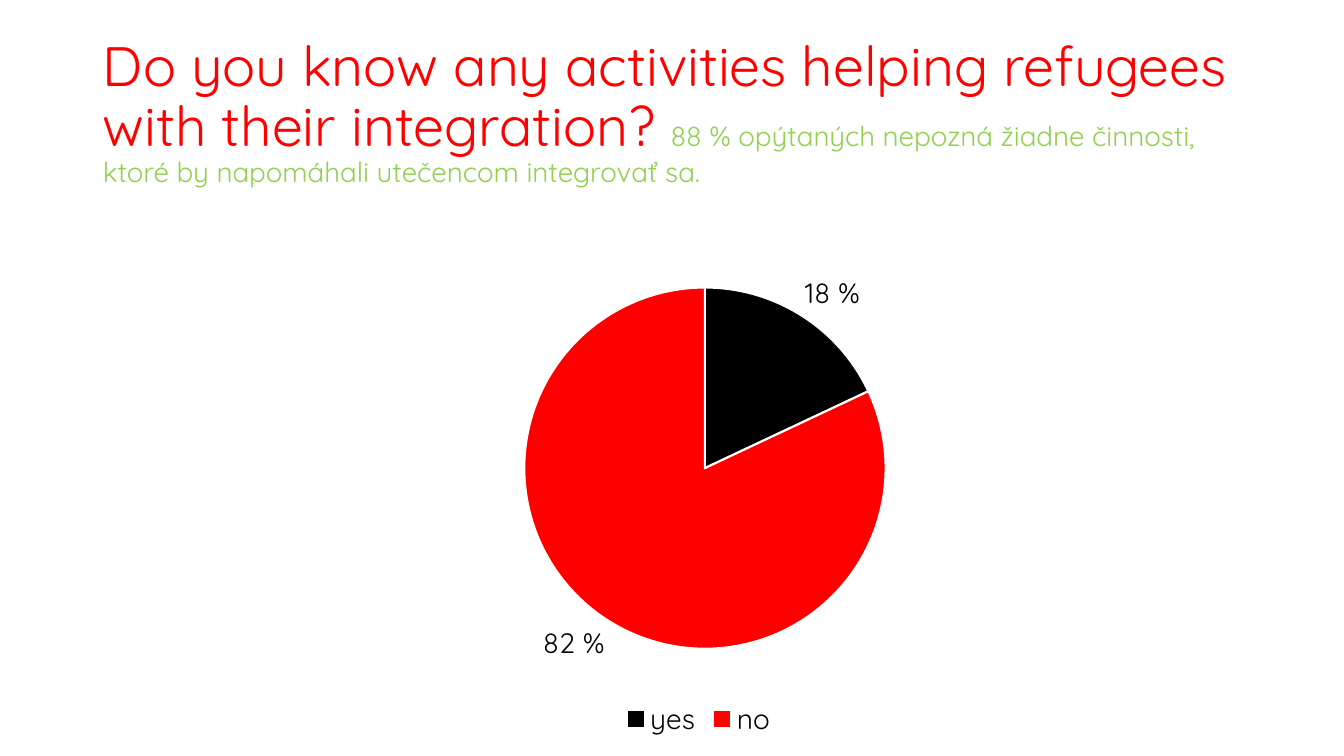
from lxml.etree import SubElement
from pptx import Presentation
from pptx.chart.data import CategoryChartData
from pptx.dml.color import RGBColor
from pptx.enum.chart import XL_CHART_TYPE, XL_LABEL_POSITION, XL_LEGEND_POSITION
from pptx.enum.text import MSO_ANCHOR, MSO_AUTO_SIZE, PP_ALIGN
from pptx.oxml.ns import qn
from pptx.util import Inches, Pt

FONT = "Quicksand"
BLACK, RED, GREEN, WHITE = "000000", "FF0000", "92D050", "FFFFFF"


def rgb(color):
    return RGBColor.from_string(color)


def set_font(font, size, color, name=FONT):
    font.name = name
    font.size = Pt(size)
    font.color.rgb = rgb(color)


prs = Presentation()
prs.slide_width, prs.slide_height = Inches(13.33), Inches(7.5)
slide = prs.slides.add_slide(prs.slide_layouts[5])

# Title: question and answer
title = slide.shapes.title
title.left, title.top = Inches(0.92), Inches(0.4)
title.width, title.height = Inches(11.5), Inches(1.45)
tf = title.text_frame
tf.word_wrap = True
tf.auto_size = MSO_AUTO_SIZE.NONE
tf.vertical_anchor = MSO_ANCHOR.MIDDLE
p = tf.paragraphs[0]
p.alignment = PP_ALIGN.LEFT
p.line_spacing = 0.9
for text, size, color in [
    ("Do you know any activities helping refugees with their integration? ", 39.6, RED),
    ("88 % opýtaných nepozná žiadne činnosti, ktoré by napomáhali utečencom integrovať sa.",
     19.8, GREEN),
]:
    r = p.add_run()
    r.text = text
    set_font(r.font, size, color)

# Pie chart
data = CategoryChartData()
data.categories = ["yes", "no"]
data.add_series("Series 1", (18, 82))
chart = slide.shapes.add_chart(
    XL_CHART_TYPE.PIE, Inches(0.7), Inches(2.46), Inches(12.46), Inches(4.91), data
).chart
chart.has_title = False
set_font(chart.font, 10, BLACK, "Calibri")

chart.has_legend = True
chart.legend.position = XL_LEGEND_POSITION.BOTTOM
chart.legend.include_in_layout = False
set_font(chart.legend.font, 20, BLACK)

plot = chart.plots[0]
plot.vary_by_categories = True
for i, color in enumerate([BLACK, RED]):
    fmt = plot.series[0].points[i].format
    fmt.fill.solid()
    fmt.fill.fore_color.rgb = rgb(color)
    fmt.line.color.rgb = rgb(WHITE)
    fmt.line.width = Pt(1.5)

plot.has_data_labels = True
labels = plot.data_labels
labels.show_value = True
labels.show_percentage = False
labels.number_format = '0" %"'
labels.number_format_is_linked = False
labels.position = XL_LABEL_POSITION.OUTSIDE_END
set_font(labels.font, 20, BLACK)

# Fixed place of the pie, as fractions of the chart
plot_area = chart.element.find(".//" + qn("c:plotArea"))
layout = plot_area.find(qn("c:layout"))
if layout is None:
    layout = SubElement(plot_area, qn("c:layout"))
    plot_area.insert(0, layout)
manual = SubElement(layout, qn("c:manualLayout"))
for tag, value in [("layoutTarget", "inner"), ("xMode", "edge"), ("yMode", "edge"),
                   ("x", "0.36"), ("y", "0.08"), ("w", "0.29"), ("h", "0.73")]:
    SubElement(manual, qn("c:" + tag)).set("val", value)

prs.save("out.pptx")
